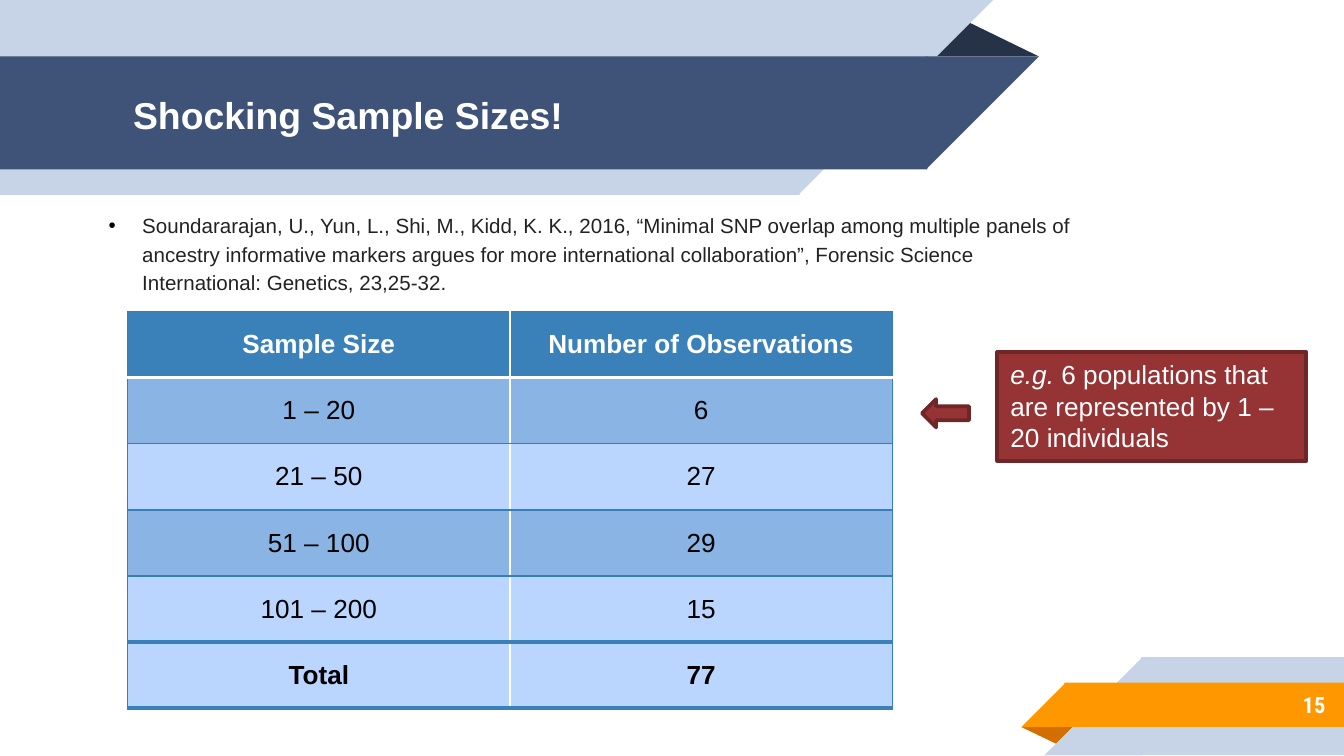
from lxml import etree
from pptx import Presentation
from pptx.dml.color import RGBColor
from pptx.enum.shapes import MSO_SHAPE as SHAPE
from pptx.enum.text import MSO_ANCHOR as ANCHOR, MSO_AUTO_SIZE as AUTO_SIZE, PP_ALIGN as ALIGN
from pptx.oxml.ns import qn
from pptx.util import Inches, Pt

PALE, NAVY, ORANGE = "C7D3E6", "3F5378", "FF9800"
RED, DARK_RED = "963334", "6F2626"
BLUE, GRID, BAND, LIGHT = "3A81BA", "367EB9", "89B4E3", "BBD6FE"
ROWS = [
    ("Sample Size", "Number of Observations"),
    ("1 – 20", "6"),
    ("21 – 50", "27"),
    ("51 – 100", "29"),
    ("101 – 200", "15"),
    ("Total", "77"),
]


def rgb(color):
    return RGBColor.from_string(color)


def style(run, size, color, bold=False, font="Arial"):
    run.font.size, run.font.bold, run.font.name = Pt(size), bold, font
    run.font.color.rgb = rgb(color)


def add_shape(s, kind, box, fill, line=None, rotation=0):
    sp = s.shapes.add_shape(kind, *map(Inches, box))
    sp.shadow.inherit = False
    sp.rotation = rotation
    sp.fill.solid()
    sp.fill.fore_color.rgb = rgb(fill)
    if line:
        sp.line.color.rgb = rgb(line)
        sp.line.width = Pt(2)
    else:
        sp.line.fill.background()
    return sp


def add_ribbon(s, box, fill, slant_left=False):
    """Band whose left or right end is cut at 45 degrees."""
    x, y, w, h = box
    lap = 0.01  # hides the seam between body and tip
    body_x, tip_x = (x + h - lap, x) if slant_left else (x, x + w - h)
    add_shape(s, SHAPE.RECTANGLE, (body_x, y, w - h + lap, h), fill)
    add_shape(s, SHAPE.RIGHT_TRIANGLE, (tip_x, y, h, h), fill,
              rotation=270 if slant_left else 90)


def add_fold(s, box, fill, rotation=0):
    sp = add_shape(s, SHAPE.ISOSCELES_TRIANGLE, box, fill, rotation=rotation)
    sp.adjustments[0] = 0.324


def add_header(s, box, text):
    x, y, w, h = box
    add_fold(s, (x + w - 0.85, y + 0.14, 0.85, 0.28), "263248")
    add_ribbon(s, (x, y, 7.39, h), PALE)
    add_ribbon(s, (x, y + 0.42, w, 0.84), NAVY)

    title = s.shapes.title
    s.shapes.element.append(title.element)  # bring in front of the ribbons
    title.left, title.top = Inches(x + 0.89), Inches(y + 0.43)
    title.width, title.height = Inches(5.75), Inches(0.84)
    tf = title.text_frame
    tf.text = text
    tf.vertical_anchor = ANCHOR.MIDDLE
    tf.margin_left = tf.margin_right = tf.margin_top = tf.margin_bottom = Inches(0.1)
    p = tf.paragraphs[0]
    p.alignment = ALIGN.LEFT
    style(p.runs[0], 20, "FFFFFF", True)


def add_footer(s, box, number):
    x, y, w, h = box
    add_fold(s, (x, y + 0.52, 0.43, 0.14), "D26F00", rotation=180)
    add_ribbon(s, (x + 0.17, y, w - 0.17, h), PALE, slant_left=True)
    add_ribbon(s, (x, y + 0.19, w, 0.33), ORANGE, slant_left=True)

    sp = s.shapes.add_textbox(Inches(x + 0.73), Inches(y + 0.18), Inches(1.63), Inches(0.35))
    tf = sp.text_frame
    tf.word_wrap = True
    tf.vertical_anchor = ANCHOR.MIDDLE
    tf.margin_left = tf.margin_right = tf.margin_top = tf.margin_bottom = Inches(0.1)
    tf.text = number
    p = tf.paragraphs[0]
    p.alignment = ALIGN.RIGHT
    style(p.runs[0], 12, "FFFFFF", True, "Roboto Condensed")


def add_reference(s, box, text):
    tf = s.shapes.add_textbox(*map(Inches, box)).text_frame
    tf.word_wrap = True
    tf.auto_size = AUTO_SIZE.SHAPE_TO_FIT_TEXT
    tf.text = text
    p = tf.paragraphs[0]
    p.line_spacing, p.space_after = 1.15, Pt(10)
    style(p.runs[0], 11, "222222")
    pPr = p._p.get_or_add_pPr()
    pPr.set("marL", str(Inches(0.25)))
    pPr.set("indent", str(-Inches(0.25)))
    color = etree.SubElement(pPr, qn("a:buClr"))
    etree.SubElement(color, qn("a:srgbClr"), val="000000")
    etree.SubElement(pPr, qn("a:buFont"), typeface="Arial")
    etree.SubElement(pPr, qn("a:buChar"), char="•")


def set_borders(cell, borders):
    """Apply {side: (color, points)}, with sides in the order L, R, T, B."""
    tcPr = cell._tc.get_or_add_tcPr()
    for i, (side, (color, width)) in enumerate(borders.items()):
        ln = etree.Element(qn(f"a:ln{side}"), w=str(Pt(width)))
        fill = etree.SubElement(ln, qn("a:solidFill"))
        etree.SubElement(fill, qn("a:srgbClr"), val=color)
        tcPr.insert(i, ln)


def add_sample_table(s, box):
    last = len(ROWS) - 1
    thin = (GRID, 0.75)
    heavy = {1: ("FFFFFF", 2), last: (BLUE, 2), last + 1: (BLUE, 2)}
    table = s.shapes.add_table(len(ROWS), 2, *map(Inches, box)).table
    for r, values in enumerate(ROWS):
        fill = BLUE if r == 0 else BAND if r % 2 and r < last else LIGHT
        for c, value in enumerate(values):
            cell = table.cell(r, c)
            cell.text = value
            cell.vertical_anchor = ANCHOR.MIDDLE
            cell.fill.solid()
            cell.fill.fore_color.rgb = rgb(fill)
            p = cell.text_frame.paragraphs[0]
            p.alignment = ALIGN.CENTER
            style(p.runs[0], 14, "000000" if r else "FFFFFF", r in (0, last))
            borders = {"L": thin} if c == 0 else {}
            borders |= {"R": thin, "T": heavy.get(r, thin), "B": heavy.get(r + 1, thin)}
            set_borders(cell, borders)


def add_callout(s, box):
    x, y, w, h = box
    sp = add_shape(s, SHAPE.RECTANGLE, (x + 0.56, y, w - 0.56, h), RED, DARK_RED)
    tf = sp.text_frame
    tf.word_wrap = True
    tf.auto_size = AUTO_SIZE.SHAPE_TO_FIT_TEXT
    tf.vertical_anchor = ANCHOR.TOP
    p = tf.paragraphs[0]
    p.alignment = ALIGN.LEFT
    for text, italic in (("e.g.", True),
                         (" 6 populations that are represented by 1 – 20 individuals", False)):
        r = p.add_run()
        r.text = text
        style(r, 14, "FFFFFF")
        r.font.italic = italic
    add_shape(s, SHAPE.RIGHT_ARROW, (x, y + 0.35, 0.35, 0.21), RED, DARK_RED, rotation=180)


def main():
    prs = Presentation()
    prs.slide_width, prs.slide_height = Inches(10), Inches(5.625)
    s = prs.slides.add_slide(prs.slide_layouts[5])
    add_header(s, (0, 0, 7.73, 1.45), "Shocking Sample Sizes!")
    add_footer(s, (7.6, 4.89, 2.4, 0.73), "15")
    add_sample_table(s, (0.95, 2.32, 5.69, 2.95))
    add_reference(s, (0.71, 1.51, 7.39, 0.72),
                  "Soundararajan, U., Yun, L., Shi, M., Kidd, K. K., 2016, “Minimal SNP overlap "
                  "among multiple panels of ancestry informative markers argues for more "
                  "international collaboration”, Forensic Science International: Genetics, "
                  "23,25-32.")
    add_callout(s, (6.86, 2.62, 2.86, 0.81))
    prs.save("out.pptx")


if __name__ == "__main__":
    main()
